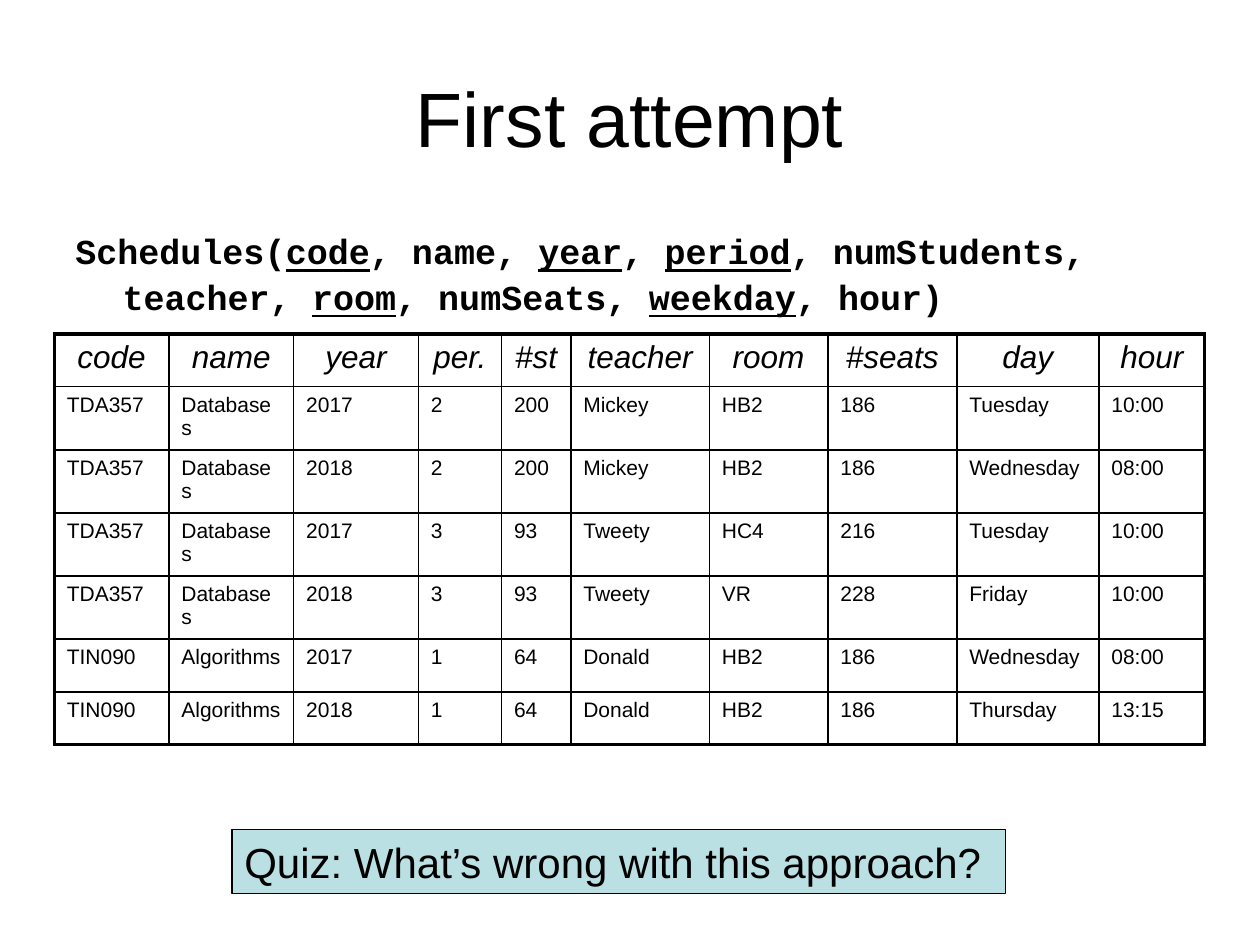
import pptx
import pptx.dml.color
import pptx.enum.shapes
import pptx.enum.text
import pptx.oxml
import pptx.oxml.ns
import pptx.util

Pt = pptx.util.Pt
ALIGN = pptx.enum.text.PP_ALIGN
ANCHOR = pptx.enum.text.MSO_ANCHOR

TITLE = "First attempt"
# Each run of the relation schema, with True for the underlined key attributes
SCHEMA = [
    ("Schedules(", False), ("code", True), (", name, ", False),
    ("year", True), (", ", False), ("period", True),
    (", numStudents, teacher, ", False), ("room", True),
    (", numSeats, ", False), ("weekday", True), (", hour)", False),
]
COLUMNS = [
    ("code", 65.5), ("name", 71.3), ("year", 71.3), ("per.", 47.5),
    ("#st", 39.6), ("teacher", 79.2), ("room", 67.7), ("#seats", 73.7),
    ("day", 81.2), ("hour", 60.5),
]
ROWS = [
    ("TDA357", "Databases", "2017", "2", "200", "Mickey", "HB2", "186", "Tuesday", "10:00"),
    ("TDA357", "Databases", "2018", "2", "200", "Mickey", "HB2", "186", "Wednesday", "08:00"),
    ("TDA357", "Databases", "2017", "3", "93", "Tweety", "HC4", "216", "Tuesday", "10:00"),
    ("TDA357", "Databases", "2018", "3", "93", "Tweety", "VR", "228", "Friday", "10:00"),
    ("TIN090", "Algorithms", "2017", "1", "64", "Donald", "HB2", "186", "Wednesday", "08:00"),
    ("TIN090", "Algorithms", "2018", "1", "64", "Donald", "HB2", "186", "Thursday", "13:15"),
]
QUIZ = "Quiz: What’s wrong with this approach?"

THEME = {
    "ink": "000000",
    "quiz_fill": "BBE0E3",
    "title": {"name": "Arial", "size": Pt(44)},
    "schema": {"name": "Courier New", "size": Pt(20), "bold": True},
    "header": {"name": "Arial", "size": Pt(18), "italic": True},
    "body": {"name": "Arial", "size": Pt(12)},
    "quiz": {"name": "Arial", "size": Pt(24)},
    "outer_line": 2.25,
    "inner_line": 1,
    "quiz_line": 0.75,
}
ROW_HEIGHT = 30.2


def rgb(value):
    return pptx.dml.color.RGBColor.from_string(value)


def box(left, top, width, height):
    return [Pt(v) for v in (left, top, width, height)]


def add_run(p, text, style, **extra):
    r = p.add_run()
    r.text = text
    for name, value in {**THEME[style], **extra}.items():
        setattr(r.font, name, value)
    r.font.color.rgb = rgb(THEME["ink"])


def set_borders(cell, widths):
    """Draw cell borders; widths maps L, R, T and B to points."""
    tc_pr = cell._tc.get_or_add_tcPr()
    ns = pptx.oxml.ns.nsdecls("a")
    for i, (side, width) in enumerate(widths.items()):
        tc_pr.insert(i, pptx.oxml.parse_xml(
            f'<a:ln{side} {ns} w="{int(Pt(width))}"><a:solidFill>'
            f'<a:srgbClr val="{THEME["ink"]}"/></a:solidFill></a:ln{side}>'))


def add_title(slide):
    tf = slide.shapes.add_textbox(*box(36, 21.6, 648, 90)).text_frame
    tf.word_wrap = True
    tf.vertical_anchor = ANCHOR.MIDDLE
    p = tf.paragraphs[0]
    p.alignment = ALIGN.CENTER
    add_run(p, TITLE, "title")


def add_schema(slide):
    tf = slide.shapes.add_textbox(*box(36, 126, 635.8, 64.8)).text_frame
    tf.word_wrap = True
    p = tf.paragraphs[0]
    p.space_before = Pt(2)
    p.line_spacing = 1.08
    p_pr = p._p.get_or_add_pPr()
    p_pr.set("marL", str(Pt(27)))
    p_pr.set("indent", str(-Pt(27)))
    for text, is_key in SCHEMA:
        add_run(p, text, "schema", underline=is_key)


def add_schedule(slide):
    grid = [[name for name, _ in COLUMNS], *ROWS]
    last_row, last_col = len(grid) - 1, len(COLUMNS) - 1
    width = sum(w for _, w in COLUMNS)
    table = slide.shapes.add_table(
        len(grid), len(COLUMNS),
        *box(31, 190.8, width, ROW_HEIGHT * len(grid))).table
    for col, (_, w) in zip(table.columns, COLUMNS):
        col.width = Pt(w)
    for i, values in enumerate(grid):
        table.rows[i].height = Pt(ROW_HEIGHT)
        for j, text in enumerate(values):
            cell = table.cell(i, j)
            cell.fill.background()
            p = cell.text_frame.paragraphs[0]
            p.alignment = ALIGN.LEFT if i else ALIGN.CENTER
            add_run(p, text, "body" if i else "header")
            on_edge = {"L": j == 0, "R": j == last_col,
                       "T": i == 0, "B": i == last_row}
            set_borders(cell, {
                side: THEME["outer_line" if edge else "inner_line"]
                for side, edge in on_edge.items()})


def add_quiz(slide):
    sp = slide.shapes.add_shape(
        pptx.enum.shapes.MSO_SHAPE.RECTANGLE, *box(132.5, 473.8, 442, 36.7))
    sp.shadow.inherit = False
    sp.fill.solid()
    sp.fill.fore_color.rgb = rgb(THEME["quiz_fill"])
    sp.line.color.rgb = rgb(THEME["ink"])
    sp.line.width = Pt(THEME["quiz_line"])
    tf = sp.text_frame
    tf.word_wrap = True
    tf.vertical_anchor = ANCHOR.MIDDLE
    p = tf.paragraphs[0]
    p.alignment = ALIGN.LEFT
    add_run(p, QUIZ, "quiz")


def main():
    prs = pptx.Presentation()
    prs.slide_width, prs.slide_height = Pt(720), Pt(540)
    slide = prs.slides.add_slide(prs.slide_layouts[6])
    for add_part in (add_title, add_schema, add_schedule, add_quiz):
        add_part(slide)
    prs.save("out.pptx")


if __name__ == "__main__":
    main()
